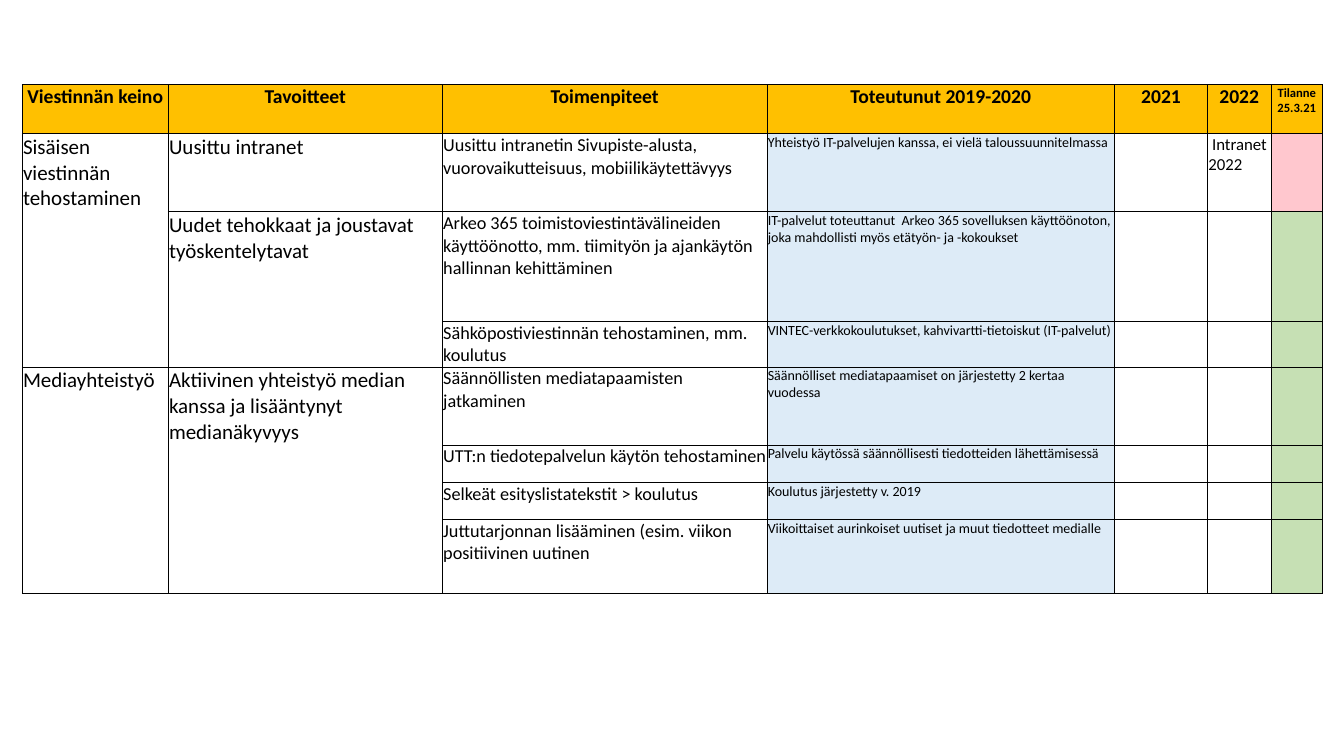
from lxml import etree
from pptx import Presentation
from pptx.dml.color import RGBColor
from pptx.enum.text import MSO_ANCHOR, PP_ALIGN
from pptx.oxml.ns import qn
from pptx.util import Cm, Pt

CENTER, LEFT = PP_ALIGN.CENTER, PP_ALIGN.LEFT
TOP = MSO_ANCHOR.TOP

BLACK = RGBColor(0x00, 0x00, 0x00)
WHITE = RGBColor(0xFF, 0xFF, 0xFF)
AMBER = RGBColor(0xFF, 0xC0, 0x00)
BLUE = RGBColor(0xDD, 0xEB, 0xF7)
RED = RGBColor(0xFF, 0xC7, 0xCE)
GREEN = RGBColor(0xC6, 0xE0, 0xB4)

COL_WIDTHS = [3.68, 6.91, 8.18, 8.76, 2.34, 1.6, 1.3]
ROW_HEIGHTS = [1.24, 1.85, 2.77, 0.94, 1.85, 0.94, 0.94, 1.85]

# Text size and fill of each body column; the status column is coloured by row
BODY_SIZES = [15, 15, 13, 10, 12, 12, 12]
BODY_FILLS = [WHITE, WHITE, WHITE, BLUE, None, None]
STATUS_FILLS = [RED] + [GREEN] * 6

# First and last row of each group that reads as one tall cell, by column
GROUPS = {0: [(1, 3), (4, 7)], 1: [(2, 3), (4, 7)]}

HEADER = ["Viestinnän keino", "Tavoitteet", "Toimenpiteet",
          "Toteutunut 2019-2020", "2021", "2022", "Tilanne 25.3.21"]
BODY = [
    ["Sisäisen viestinnän tehostaminen", "Uusittu intranet",
     "Uusittu intranetin Sivupiste-alusta, vuorovaikutteisuus, mobiilikäytettävyys",
     "Yhteistyö IT-palvelujen kanssa, ei vielä taloussuunnitelmassa",
     "", " Intranet 2022"],
    ["", "Uudet tehokkaat ja joustavat työskentelytavat",
     "Arkeo 365 toimistoviestintävälineiden käyttöönotto, mm. tiimityön ja "
     "ajankäytön hallinnan kehittäminen",
     "IT-palvelut toteuttanut  Arkeo 365 sovelluksen käyttöönoton, joka "
     "mahdollisti myös etätyön- ja -kokoukset"],
    ["", "", "Sähköpostiviestinnän tehostaminen, mm. koulutus",
     "VINTEC-verkkokoulutukset, kahvivartti-tietoiskut (IT-palvelut)"],
    ["Mediayhteistyö",
     "Aktiivinen yhteistyö median kanssa ja lisääntynyt medianäkyvyys",
     "Säännöllisten mediatapaamisten jatkaminen",
     "Säännölliset mediatapaamiset on järjestetty 2 kertaa vuodessa"],
    ["", "", "UTT:n tiedotepalvelun käytön tehostaminen",
     "Palvelu käytössä säännöllisesti tiedotteiden lähettämisessä"],
    ["", "", "Selkeät esityslistatekstit > koulutus",
     "Koulutus järjestetty v. 2019"],
    ["", "", "Juttutarjonnan lisääminen (esim. viikon positiivinen uutinen",
     "Viikoittaiset aurinkoiset uutiset ja muut tiedotteet medialle"],
]


class SlideBuilder:
    font = "Calibri"
    border_pt = 0.5
    cell_format = {"margin_left": Cm(0.02), "margin_right": Cm(0.02),
                   "margin_top": Cm(0.02), "margin_bottom": Cm(0),
                   "vertical_anchor": TOP}

    def __init__(self, slide):
        self.s = slide

    def table(self, left, top, widths, heights):
        frame = self.s.shapes.add_table(
            len(heights), len(widths), Cm(left), Cm(top),
            Cm(sum(widths)), Cm(sum(heights)))
        table = frame.table
        table.first_row = table.horz_banding = False
        for column, width in zip(table.columns, widths):
            column.width = Cm(width)
        for row, height in zip(table.rows, heights):
            row.height = Cm(height)
        return table

    def borders(self, cell, hidden):
        tc_pr = cell._tc.get_or_add_tcPr()
        for side in "LRTB":
            ln = etree.SubElement(tc_pr, qn(f"a:ln{side}"),
                                  w=str(Pt(self.border_pt)))
            if side in hidden:
                etree.SubElement(ln, qn("a:noFill"))
            else:
                fill = etree.SubElement(ln, qn("a:solidFill"))
                etree.SubElement(fill, qn("a:srgbClr"), val=str(BLACK))

    def cell(self, cell, text, size, fill, bold=False, align=LEFT, hidden=""):
        for name, value in self.cell_format.items():
            setattr(cell, name, value)
        self.borders(cell, hidden)
        if fill is None:
            cell.fill.background()
        else:
            cell.fill.solid()
            cell.fill.fore_color.rgb = fill
        p = cell.text_frame.paragraphs[0]
        p.alignment = align
        if text:
            r = p.add_run()
            r.text = text
            font = {"name": self.font, "size": Pt(size), "bold": bold}
            for name, value in font.items():
                setattr(r.font, name, value)
            r.font.color.rgb = BLACK


def hidden_sides(row, col):
    """Sides without a line inside a group of rows."""
    for first, last in GROUPS.get(col, []):
        if first <= row <= last:
            return ("T" if row > first else "") + ("B" if row < last else "")
    return ""


def main():
    prs = Presentation()
    prs.slide_width, prs.slide_height = Cm(33.87), Cm(19.05)
    builder = SlideBuilder(prs.slides.add_slide(prs.slide_layouts[6]))
    table = builder.table(0.56, 2.13, COL_WIDTHS, ROW_HEIGHTS)

    # Header row
    for col, text in enumerate(HEADER):
        size = 9 if col == len(HEADER) - 1 else 14
        builder.cell(table.cell(0, col), text, size, AMBER, True, CENTER)

    # Body rows
    for row, (texts, status) in enumerate(zip(BODY, STATUS_FILLS), start=1):
        texts = texts + [""] * (len(HEADER) - len(texts))
        fills = BODY_FILLS + [status]
        for col, (text, size, fill) in enumerate(zip(texts, BODY_SIZES, fills)):
            builder.cell(table.cell(row, col), text, size, fill,
                         hidden=hidden_sides(row, col))

    prs.save("out.pptx")


if __name__ == "__main__":
    main()
